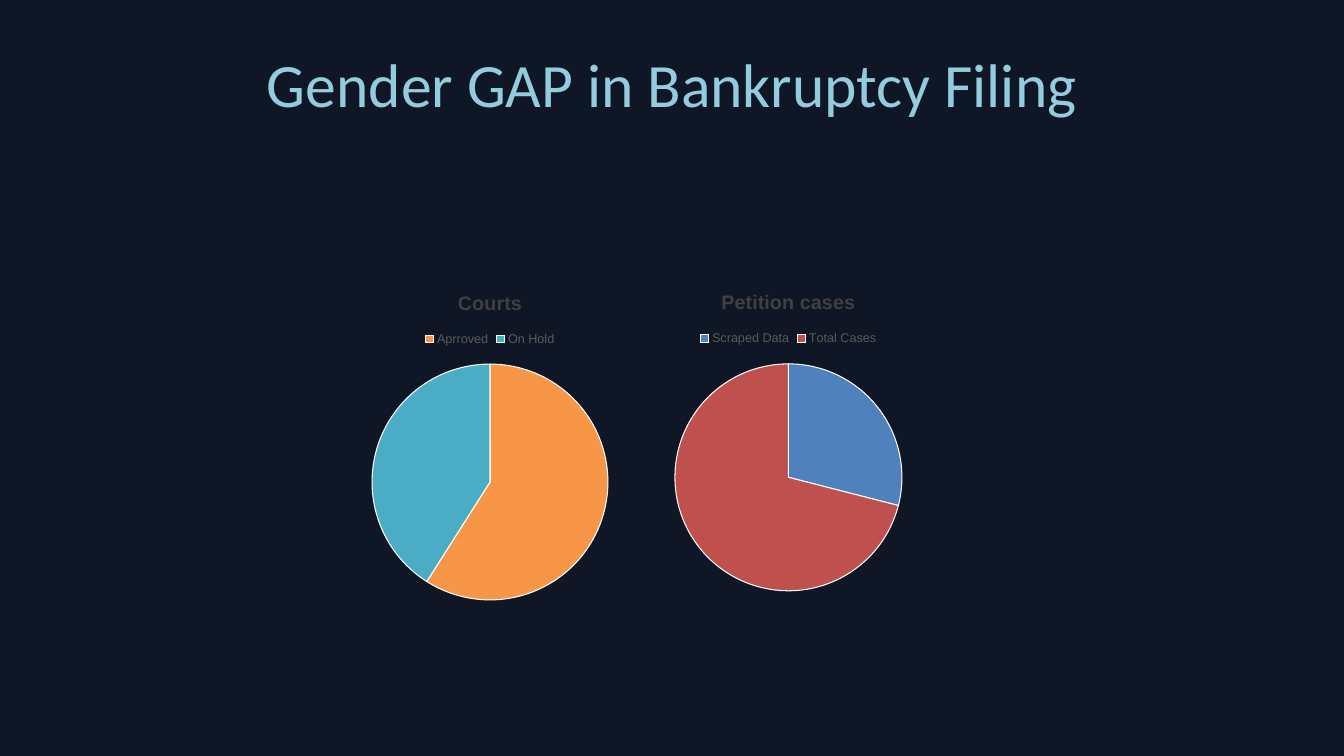
"""Build a slide with two pie charts on court and petition figures."""
from dataclasses import dataclass

from pptx import Presentation
from pptx.chart.data import CategoryChartData
from pptx.dml.color import RGBColor
from pptx.enum import chart as ch, text
from pptx.util import Inches, Pt

TITLE = "Gender GAP in Bankruptcy Filing"
PIES = [
    {"name": "Courts", "slices": {"Aprroved": 59, "On Hold": 41},
     "colors": ("F79646", "4BACC6"), "size": (3.12, 3.37)},
    {"name": "Petition cases", "slices": {"Scraped Data": 29, "Total Cases": 71},
     "colors": ("4F81BD", "C0504D"), "size": (2.8, 3.28)},
]
SLIDE_W, SLIDE_H = 13.33, 7.5
TITLE_BOX = (0.67, 0.2, 12, 1.25)
PIES_LEFT, PIES_TOP = 3.3, 2.72


@dataclass(frozen=True)
class Theme:
    background: str = "0F1625"
    title: str = "93CDDD"
    chart_text: str = "000000"
    chart_title: str = "404040"
    legend: str = "595959"
    border: str = "FFFFFF"
    title_font: str = "Calibri"
    chart_font: str = "Arial"
    title_size: int = 44
    chart_size: int = 10
    chart_title_size: int = 14
    legend_size: int = 9


THEME = Theme()


def style(font, name, size, color, bold=False):
    font.name, font.size, font.bold = name, Pt(size), bold
    font.color.rgb = RGBColor.from_string(color)


def add_title(s):
    sp = s.shapes.title
    sp.left, sp.top, sp.width, sp.height = map(Inches, TITLE_BOX)
    tf = sp.text_frame
    tf.text = TITLE
    tf.vertical_anchor = text.MSO_ANCHOR.MIDDLE
    p = tf.paragraphs[0]
    p.alignment = text.PP_ALIGN.CENTER
    style(p.runs[0].font, THEME.title_font, THEME.title_size, THEME.title)


def add_pie(s, pie, left):
    data = CategoryChartData()
    data.categories = list(pie["slices"])
    data.add_series(pie["name"], list(pie["slices"].values()))
    box = map(Inches, (left, PIES_TOP, *pie["size"]))
    chart = s.shapes.add_chart(ch.XL_CHART_TYPE.PIE, *box, data).chart
    style(chart.font, THEME.chart_font, THEME.chart_size, THEME.chart_text)

    chart.has_title = True
    tf = chart.chart_title.text_frame
    tf.text = pie["name"]
    style(tf.paragraphs[0].runs[0].font, THEME.chart_font,
          THEME.chart_title_size, THEME.chart_title, bold=True)
    chart.chart_title.include_in_layout = False

    chart.has_legend = True
    chart.legend.position = ch.XL_LEGEND_POSITION.TOP
    chart.legend.include_in_layout = False
    style(chart.legend.font, THEME.chart_font, THEME.legend_size, THEME.legend)

    plot = chart.plots[0]
    plot.vary_by_categories = True
    for i, color in enumerate(pie["colors"]):
        fmt = plot.series[0].points[i].format
        fmt.fill.solid()
        fmt.fill.fore_color.rgb = RGBColor.from_string(color)
        fmt.line.color.rgb = RGBColor.from_string(THEME.border)
        fmt.line.width = Pt(0.75)


def main():
    prs = Presentation()
    prs.slide_width, prs.slide_height = Inches(SLIDE_W), Inches(SLIDE_H)
    s = prs.slides.add_slide(prs.slide_layouts[5])
    s.background.fill.solid()
    s.background.fill.fore_color.rgb = RGBColor.from_string(THEME.background)
    add_title(s)
    left = PIES_LEFT
    for pie in PIES:
        add_pie(s, pie, left)
        left += pie["size"][0]
    prs.save("out.pptx")


if __name__ == "__main__":
    main()
